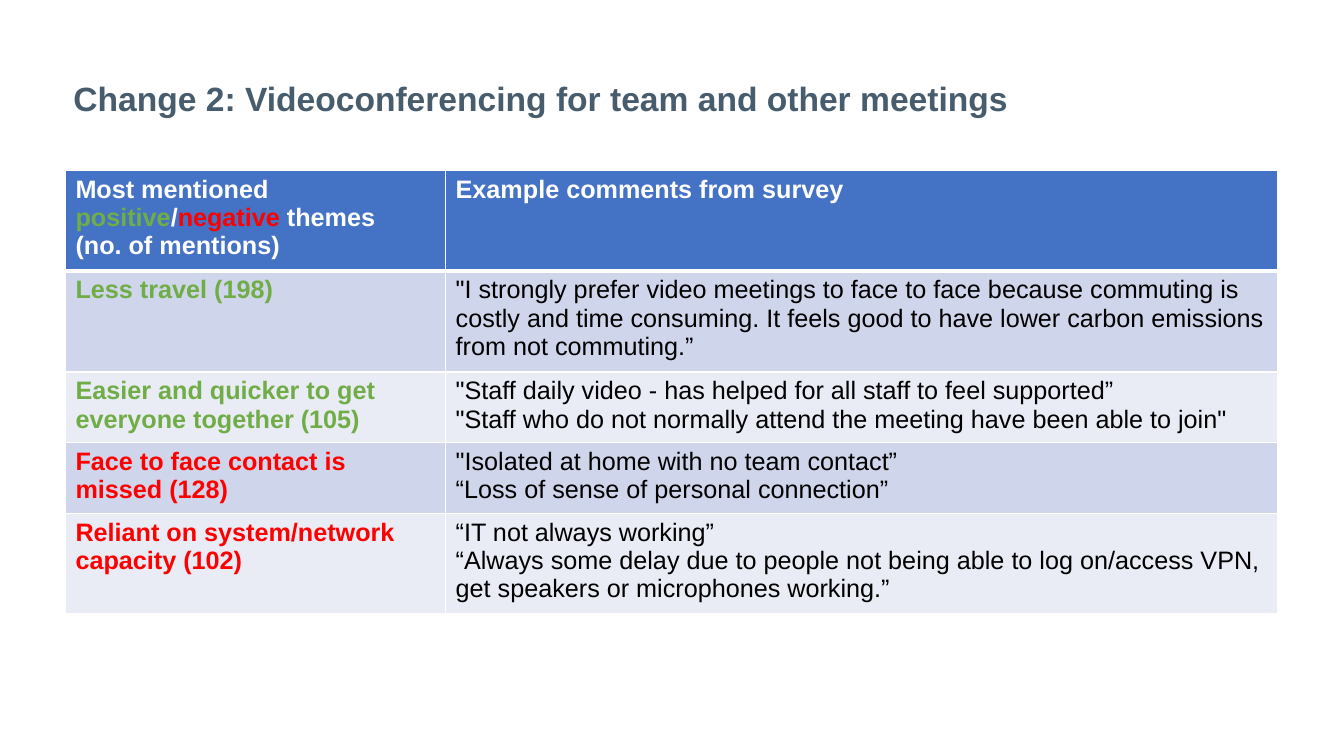
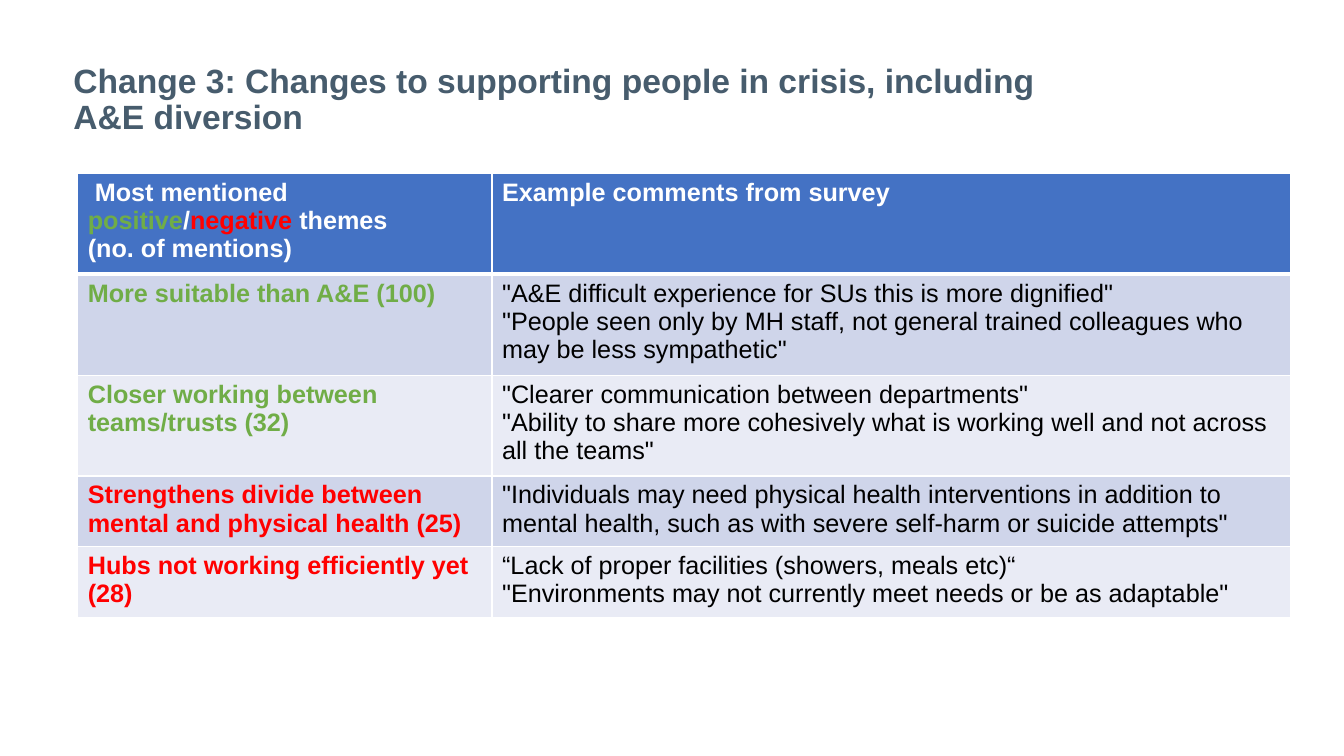
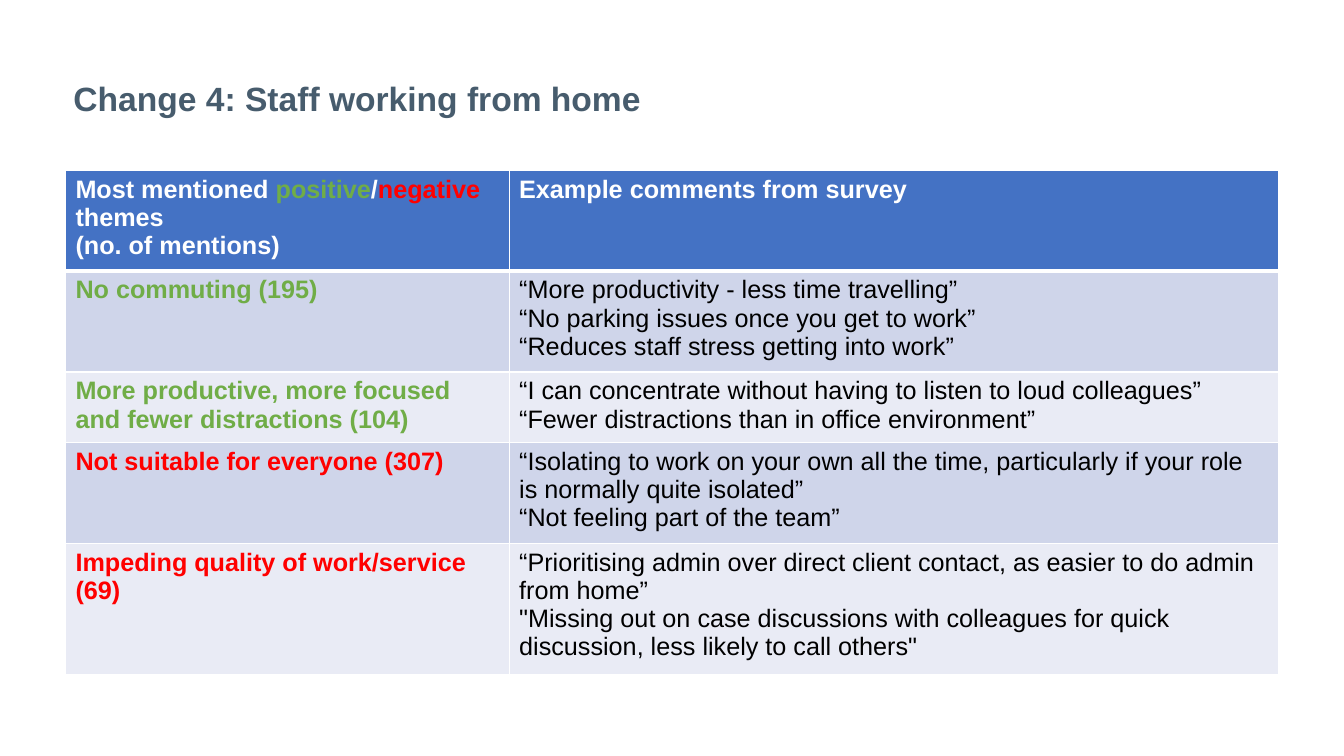
"""Build three slides of survey themes, each a title above a table."""
from lxml import etree
from pptx import Presentation
from pptx.dml.color import RGBColor
from pptx.enum.text import MSO_ANCHOR
from pptx.oxml.ns import qn
from pptx.util import Cm, Pt

MIDDLE = MSO_ANCHOR.MIDDLE
SLATE = RGBColor(0x47, 0x5C, 0x6D)
BLUE = RGBColor(0x44, 0x72, 0xC4)
DARK = RGBColor(0xCF, 0xD5, 0xEA)
LIGHT = RGBColor(0xE9, 0xEB, 0xF5)
GREEN = RGBColor(0x70, 0xAD, 0x47)
RED = RGBColor(0xFF, 0x00, 0x00)
WHITE = RGBColor(0xFF, 0xFF, 0xFF)
BLACK = RGBColor(0x00, 0x00, 0x00)
FONT = "Arial"
WIDTH = 30.56
FILLS = [BLUE, DARK, LIGHT, DARK, LIGHT]
TONES = [WHITE, GREEN, GREEN, RED, RED]

DECK = [
    {
        "title": "Change 2: Videoconferencing for team and other meetings",
        "span": WIDTH, "left": 1.65, "top": 4.29, "first": 9.58,
        "lead": "Most mentioned ",
        "rows": [
            ("Less travel (198)", [
                '"I strongly prefer video meetings to face to face because commuting is costly '
                'and time consuming. It feels good to have lower carbon emissions from not commuting.”']),
            ("Easier and quicker to get everyone together (105)", [
                '"Staff daily video - has helped for all staff to feel supported”',
                '"Staff who do not normally attend the meeting have been able to join"']),
            ("Face to face contact is missed (128)", [
                '"Isolated at home with no team contact”',
                '“Loss of sense of personal connection”']),
            ("Reliant on system/network capacity (102)", [
                '“IT not always working”',
                '“Always some delay due to people not being able to log on/access VPN, '
                'get speakers or microphones working.”']),
        ],
    },
    {
        "title": "Change 3: Changes to supporting people in crisis, including A&E diversion",
        "span": 25.86, "left": 1.96, "top": 4.37, "first": 10.44,
        "lead": " Most mentioned ",
        "rows": [
            ("More suitable than A&E (100)", [
                '"A&E difficult experience for SUs this is more dignified"',
                '"People seen only by MH staff, not general trained colleagues who '
                'may be less sympathetic"']),
            ("Closer working between teams/trusts (32)", [
                '"Clearer communication between departments"',
                '"Ability to share more cohesively what is working well and not across all the teams"']),
            ("Strengthens divide between mental and physical health (25)", [
                '"Individuals may need physical health interventions in addition to mental health, '
                'such as with severe self-harm or suicide attempts"']),
            ("Hubs not working efficiently yet (28)", [
                '“Lack of proper facilities (showers, meals etc)“',
                '"Environments may not currently meet needs or be as adaptable"']),
        ],
    },
    {
        "title": "Change 4: Staff working from home",
        "span": WIDTH, "left": 1.65, "top": 4.29, "first": 11.18,
        "lead": "Most mentioned ",
        "rows": [
            ("No commuting (195)", [
                '“More productivity - less time travelling”',
                '“No parking issues once you get to work”',
                '“Reduces staff stress getting into work”']),
            ("More productive, more focused and fewer distractions (104)", [
                '“I can concentrate without having to listen to loud colleagues”',
                '“Fewer distractions than in office environment”']),
            ("Not suitable for everyone (307)", [
                '“Isolating to work on your own all the time, particularly if your role is '
                'normally quite isolated”',
                '“Not feeling part of the team”']),
            ("Impeding quality of work/service (69)", [
                '“Prioritising admin over direct client contact, as easier to do admin from home”',
                '"Missing out on case discussions with colleagues for quick discussion, '
                'less likely to call others"']),
        ],
    },
]


def style(run, size, tone, bold):
    """Set the font of one run."""
    run.font.name = FONT
    run.font.size = Pt(size)
    run.font.bold = bold
    run.font.color.rgb = tone


def edge(cell, row):
    """Draw white cell borders, thicker below the header."""
    props = cell._tc.get_or_add_tcPr()
    thick = {"lnT": row == 1, "lnB": row == 0}
    for side in ("lnL", "lnR", "lnT", "lnB"):
        width = Pt(3 if thick.get(side) else 1)
        line = etree.SubElement(props, qn("a:" + side), w=str(width))
        fill = etree.SubElement(line, qn("a:solidFill"))
        etree.SubElement(fill, qn("a:srgbClr"), val=str(WHITE))


prs = Presentation()
prs.slide_width = Cm(33.87)
prs.slide_height = Cm(19.05)

for page in DECK:
    slide = prs.slides.add_slide(prs.slide_layouts[6])
    frame = slide.shapes.add_textbox(Cm(1.6), Cm(0.69), Cm(page["span"]), Cm(3.68)).text_frame
    frame.word_wrap = True
    frame.vertical_anchor = MIDDLE
    frame.text = page["title"]
    frame.paragraphs[0].line_spacing = 0.9
    style(frame.paragraphs[0].runs[0], 24, SLATE, True)

    count = len(page["rows"]) + 1
    table = slide.shapes.add_table(
        count, 2, Cm(page["left"]), Cm(page["top"]), Cm(WIDTH), Cm(1.47 * count)).table
    table.columns[0].width = Cm(page["first"])
    table.columns[1].width = Cm(WIDTH - page["first"])

    body = [("", ["Example comments from survey"])] + page["rows"]
    for row, (theme, notes) in enumerate(body):
        texts = (theme, "\n".join(notes))
        for col, text in enumerate(texts):
            cell = table.cell(row, col)
            edge(cell, row)
            cell.fill.solid()
            cell.fill.fore_color.rgb = FILLS[row]
            if row == 0 and col == 0:
                continue
            cell.text_frame.text = text
            tone = BLACK if row and col else TONES[row]
            for para in cell.text_frame.paragraphs:
                style(para.runs[0], 18, tone, row == 0 or col == 0)

    head = table.cell(0, 0).text_frame
    parts = [(page["lead"], WHITE), ("positive", GREEN), ("/", WHITE),
             ("negative", RED), (" themes", WHITE)]
    for text, tone in parts:
        run = head.paragraphs[0].add_run()
        run.text = text
        style(run, 18, tone, True)
    para = head.add_paragraph()
    para.text = "(no. of mentions)"
    style(para.runs[0], 18, WHITE, True)

prs.save("out.pptx")
